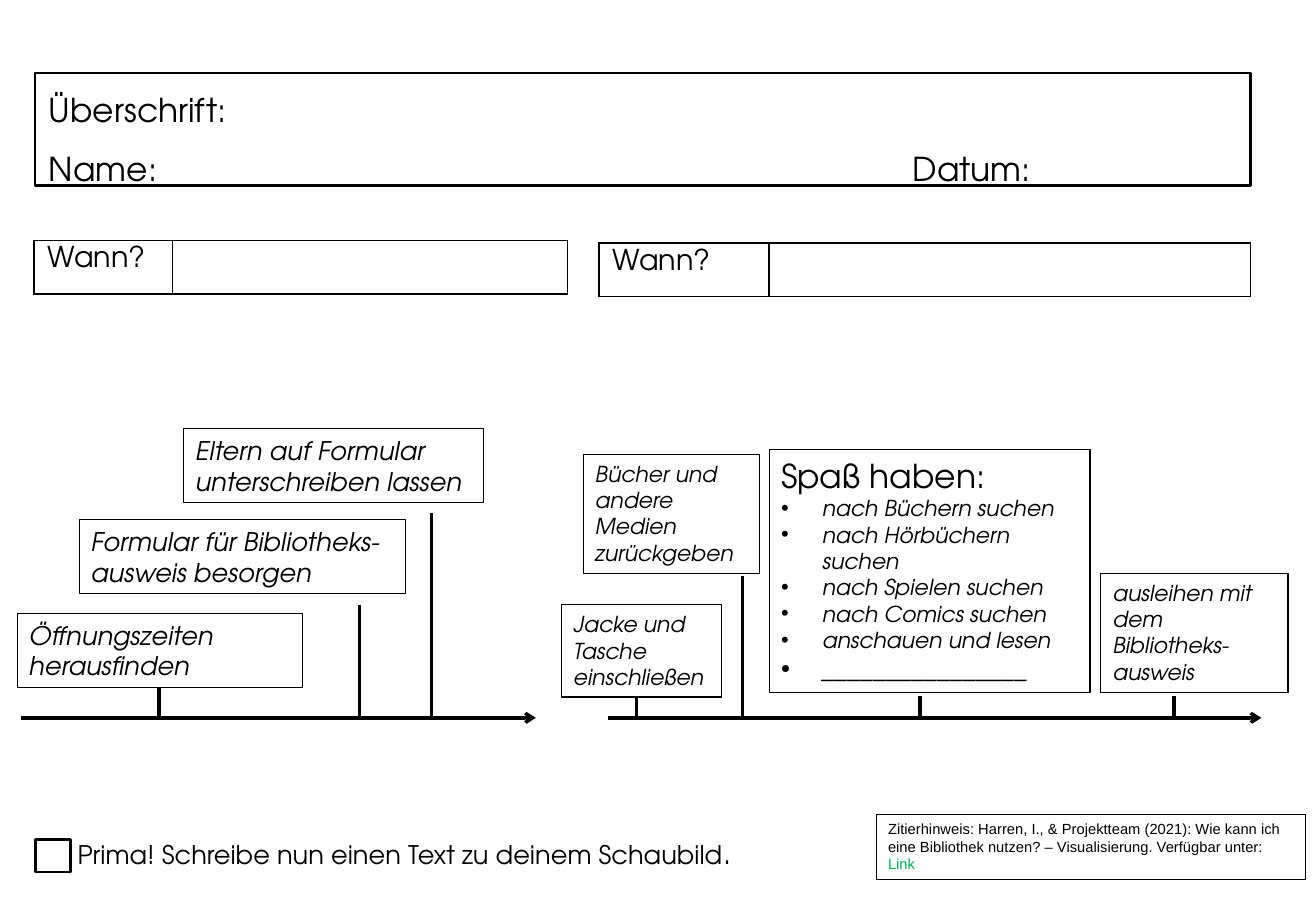
from dataclasses import dataclass

from lxml import etree
from pptx import Presentation
from pptx.dml.color import RGBColor
from pptx.enum.dml import MSO_LINE
from pptx.enum.shapes import MSO_CONNECTOR, MSO_SHAPE
from pptx.enum.text import MSO_ANCHOR, MSO_AUTO_SIZE, PP_ALIGN
from pptx.oxml.ns import qn
from pptx.util import Emu, Pt

RECT = MSO_SHAPE.RECTANGLE
STRAIGHT = MSO_CONNECTOR.STRAIGHT
DOTTED = MSO_LINE.ROUND_DOT
LEFT = PP_ALIGN.LEFT
TOP, MIDDLE = MSO_ANCHOR.TOP, MSO_ANCHOR.MIDDLE
GROW, FIXED = MSO_AUTO_SIZE.SHAPE_TO_FIT_TEXT, MSO_AUTO_SIZE.NONE
SCALE = 9144


@dataclass(frozen=True)
class Theme:
    ink: str = "000000"
    green: str = "00B050"
    font: str = "TeX Gyre Adventor"
    plain: str = "Arial"
    title: float = 19.5
    dot: float = 17.3
    label: float = 17
    body: float = 15.2
    small: float = 13
    cite: float = 8.7


THEME = Theme()


def px(*sizes):
    return [Emu(size * SCALE) for size in sizes]


def add(parent, tag, **attrs):
    return etree.SubElement(parent, qn(tag), attrs)


def write(frame, text, size=THEME.body, color=THEME.ink, font=THEME.font,
          italic=False, bullet=False, space=None, tab=None, join=False):
    for line in text.split("\n"):
        para = frame.paragraphs[-1]
        if para.runs and not join:
            para = frame.add_paragraph()
        para.alignment = LEFT
        if space:
            para.line_spacing = space
        props = para._p.get_or_add_pPr()
        if bullet:
            props.set("marL", str(34 * SCALE))
            props.set("indent", str(-34 * SCALE))
            add(props, "a:buFont", typeface=THEME.plain)
            add(props, "a:buChar", char="•")
        if tab:
            stops = add(props, "a:tabLst")
            add(stops, "a:tab", pos=str(tab * SCALE), algn="l")
        run = para.add_run()
        run.text = line
        run.font.size = Pt(size)
        run.font.name = font
        run.font.italic = italic
        run.font.color.rgb = RGBColor.from_string(color)


def frame_box(slide, box, width, anchor=TOP, fit=GROW):
    shape = slide.shapes.add_shape(RECT, *px(*box))
    shape.shadow.inherit = False
    shape.fill.background()
    shape.line.color.rgb = RGBColor.from_string(THEME.ink)
    shape.line.width = Pt(width)
    frame = shape.text_frame
    frame.word_wrap = True
    frame.auto_size = fit
    frame.vertical_anchor = anchor
    return shape


def rule(slide, start, end, arrow=False):
    line = slide.shapes.add_connector(STRAIGHT, *px(*start, *end))
    line.line.color.rgb = RGBColor.from_string(THEME.ink)
    line.line.width = Pt(2)
    if arrow:
        add(line.line._get_or_add_ln(), "a:tailEnd", type="arrow")
    add(line._element.spPr, "a:effectLst")


def header(slide, box):
    frame = frame_box(slide, box, 1.5, MIDDLE, FIXED).text_frame
    frame.margin_left, frame.margin_right = px(11, 11)
    write(frame, "Überschrift:", size=THEME.title, space=1.5)
    write(frame, "Name:\tDatum:", size=THEME.title, space=1.5, tab=711)


def when(slide, box, split):
    table = slide.shapes.add_table(1, 2, *px(*box)).table
    table.first_row = table.horz_banding = False
    for col, width in zip(table.columns, px(split, box[2] - split)):
        col.width = width
    for cell in table.iter_cells():
        cell.margin_left, cell.margin_right = px(11, 11)
        props = cell._tc.get_or_add_tcPr()
        for side in "LRTB":
            line = add(props, "a:ln" + side, w=str(Pt(1)))
            add(add(line, "a:solidFill"), "a:srgbClr", val=THEME.ink)
        cell.fill.background()
    write(table.cell(0, 0).text_frame, "Wann?", size=THEME.label)


def timeline(slide, box, notes, size, width):
    left, top, wide, high = box
    base = top + high
    rule(slide, (left, base), (left + wide, base), arrow=True)
    for (x, y, w, h), (stem, start), head, text in notes:
        rule(slide, (left + stem, top + start), (left + stem, base))
        place = (left + x, top + y, w, h)
        frame = frame_box(slide, place, width).text_frame
        if head:
            write(frame, head, size=THEME.title)
        write(frame, text, size=size, italic=True, bullet=bool(head))
        if head:
            write(frame, "_" * 16, italic=True, bullet=True)


def task(slide, box):
    left, top, wide, high = box
    frame_box(slide, (left, top + 8, 29, 27), 1.5, fit=FIXED)
    place = px(left + 25, top, wide - 25, high)
    frame = slide.shapes.add_textbox(*place).text_frame
    frame.word_wrap = True
    frame.auto_size = GROW
    write(frame, "Prima! Schreibe nun einen Text zu deinem Schaubild")
    write(frame, ".", size=THEME.dot, join=True)


def cite(slide, box):
    shape = frame_box(slide, box, 0.25)
    shape.line.dash_style = DOTTED
    look = {"size": THEME.cite, "font": THEME.plain}
    write(shape.text_frame, "Zitierhinweis: Harren, I., & Projektteam (2021): "
          "Wie kann ich eine Bibliothek nutzen? – Visualisierung. "
          "Verfügbar unter: ", **look)
    write(shape.text_frame, "Link", color=THEME.green, join=True, **look)


BEFORE = [
    ((-3, 152, 235, 61), (114, 213), "", "Öffnungszeiten herausfinden"),
    ((48, 75, 269, 61), (279, 145), "",
     "Formular für Bibliotheks-\nausweis besorgen"),
    ((134, 0, 247, 61), (338, 69), "",
     "Eltern auf Formular unterschreiben lassen"),
]
VISIT = [
    ((-38, 128, 132, 76), (24, 204), "", "Jacke und Tasche einschließen"),
    ((-20, 4, 145, 98), (111, 104), "",
     "Bücher und andere Medien zurückgeben"),
    ((133, 0, 264, 200), (257, 203), "Spaß haben:",
     "nach Büchern suchen\nnach Hörbüchern suchen\nnach Spielen suchen\n"
     "nach Comics suchen\nanschauen und lesen"),
    ((406, 102, 154, 98), (466, 203), "",
     "ausleihen mit dem Bibliotheks-ausweis"),
]


def main():
    deck = Presentation()
    deck.slide_width, deck.slide_height = px(1083, 750)
    slide = deck.slides.add_slide(deck.slide_layouts[6])
    header(slide, (29, 60, 1000, 93))
    when(slide, (28, 198, 439, 44), 114)
    when(slide, (493, 200, 536, 44), 140)
    timeline(slide, (17, 353, 424, 238), BEFORE, THEME.body, 0.5)
    timeline(slide, (500, 370, 538, 221), VISIT, THEME.small, 0.75)
    task(slide, (29, 683, 665, 43))
    cite(slide, (721, 670, 353, 54))
    deck.save("out.pptx")


if __name__ == "__main__":
    main()
